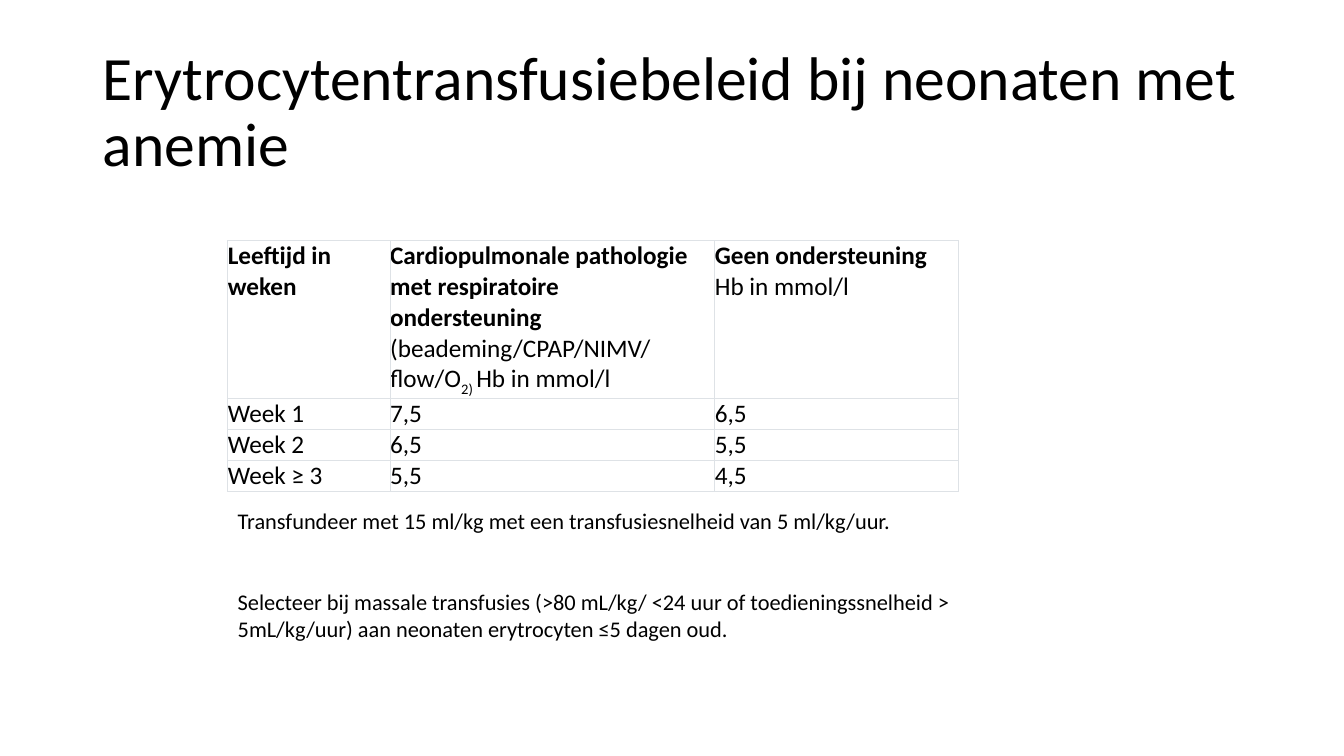
from dataclasses import dataclass

from lxml.etree import SubElement
from pptx import Presentation
from pptx.dml.color import RGBColor
from pptx.enum.text import MSO_ANCHOR as Anchor, PP_ALIGN as Align
from pptx.oxml.ns import qn
from pptx.slide import Slide
from pptx.table import _Cell as Cell
from pptx.text.text import TextFrame
from pptx.util import Emu, Inches, Pt


@dataclass(frozen=True)
class Theme:
    font: str = "Calibri"
    ink: str = "000000"
    border: str = "DEE2E6"
    border_width: float = 0.75
    title: int = 44
    table: int = 18
    note: int = 16


@dataclass(frozen=True)
class Span:
    text: str
    bold: bool = False
    subscript: bool = False


@dataclass(frozen=True)
class Line:
    spans: tuple[Span, ...]
    space_before: int = 0


@dataclass(frozen=True)
class TextBlock:
    left: float
    top: float
    width: float
    height: float
    size: int
    lines: tuple[Line, ...]
    anchor: Anchor = Anchor.TOP
    spacing: float = 1.0


@dataclass(frozen=True)
class Grid:
    left: float
    top: float
    columns: tuple[float, ...]
    header_height: float
    row_height: float
    rows: tuple[tuple[tuple[Line, ...], ...], ...]


THEME = Theme()
WIDTH, HEIGHT = Inches(13.33), Inches(7.5)


def across(percent: float) -> Emu:
    return Emu(round(WIDTH * percent / 100))


def down(percent: float) -> Emu:
    return Emu(round(HEIGHT * percent / 100))


def plain(text: str, space_before: int = 0) -> Line:
    return Line((Span(text),), space_before)


def strong(text: str) -> Line:
    return Line((Span(text, bold=True),))


TITLE = TextBlock(
    6.9, 5.33, 86.25, 19.33, THEME.title,
    (plain("Erytrocytentransfusiebeleid bij neonaten met anemie"),),
    Anchor.MIDDLE, 0.9,
)
NOTES = TextBlock(
    16.95, 66.4, 55.29, 19.33, THEME.note,
    (
        plain("Transfundeer met 15 ml/kg met een transfusiesnelheid van 5 ml/kg/uur."),
        plain(
            "Selecteer bij massale transfusies (>80 mL/kg/ <24 uur of toedieningssnelheid > "
            "5mL/kg/uur) aan neonaten erytrocyten ≤5 dagen oud.",
            space_before=39,
        ),
    ),
)
HEADER = (
    (strong("Leeftijd in weken"),),
    (
        Line((
            Span("Cardiopulmonale pathologie met respiratoire ondersteuning ", bold=True),
            Span("(beademing/CPAP/NIMV/ flow/O"),
            Span("2) ", subscript=True),
            Span("Hb in mmol/l"),
        )),
    ),
    (strong("Geen ondersteuning"), plain("Hb in mmol/l")),
)
THRESHOLDS = (
    ("Week 1", "7,5", "6,5"),
    ("Week 2", "6,5", "5,5"),
    ("Week ≥ 3", "5,5", "4,5"),
)
POLICY = Grid(
    16.95, 31.87, (12.08, 24.16, 18.15), 20.8, 4.13,
    (HEADER, *(tuple((plain(value),) for value in row) for row in THRESHOLDS)),
)


def write_lines(frame: TextFrame, lines: tuple[Line, ...], size: int, spacing: float = 1.0) -> None:
    for index, line in enumerate(lines):
        para = frame.paragraphs[0] if index == 0 else frame.add_paragraph()
        para.alignment = Align.LEFT
        para.line_spacing = spacing
        para.space_before = Pt(line.space_before)
        para.font.name = THEME.font
        para.font.size = Pt(size)
        para.font.color.rgb = RGBColor.from_string(THEME.ink)
        for span in line.spans:
            run = para.add_run()
            run.text = span.text
            run.font.bold = span.bold
            if span.subscript:
                run._r.get_or_add_rPr().set("baseline", "-25000")


def add_text(page: Slide, block: TextBlock) -> None:
    box = page.shapes.add_textbox(
        across(block.left), down(block.top), across(block.width), down(block.height)
    )
    frame = box.text_frame
    frame.word_wrap = True
    frame.vertical_anchor = block.anchor
    write_lines(frame, block.lines, block.size, block.spacing)


def style_cell(cell: Cell) -> None:
    cell.margin_left = cell.margin_right = cell.margin_top = cell.margin_bottom = 0
    properties = cell._tc.get_or_add_tcPr()
    for side in ("a:lnL", "a:lnR", "a:lnT", "a:lnB"):
        edge = SubElement(properties, qn(side), w=str(Pt(THEME.border_width)))
        fill = SubElement(edge, qn("a:solidFill"))
        SubElement(fill, qn("a:srgbClr"), val=THEME.border)
    cell.fill.background()


def add_grid(page: Slide, grid: Grid) -> None:
    heights = (grid.header_height, *[grid.row_height] * (len(grid.rows) - 1))
    table = page.shapes.add_table(
        len(grid.rows), len(grid.columns), across(grid.left), down(grid.top),
        across(sum(grid.columns)), down(sum(heights)),
    ).table
    table.first_row = False
    table.horz_banding = False
    for column, width in zip(table.columns, grid.columns):
        column.width = across(width)
    for row, height, contents in zip(table.rows, heights, grid.rows):
        row.height = down(height)
        for cell, lines in zip(row.cells, contents):
            style_cell(cell)
            write_lines(cell.text_frame, lines, THEME.table)


def main() -> None:
    deck = Presentation()
    deck.slide_width, deck.slide_height = WIDTH, HEIGHT
    page = deck.slides.add_slide(deck.slide_layouts[6])
    add_text(page, TITLE)
    add_grid(page, POLICY)
    add_text(page, NOTES)
    deck.save("out.pptx")


if __name__ == "__main__":
    main()
